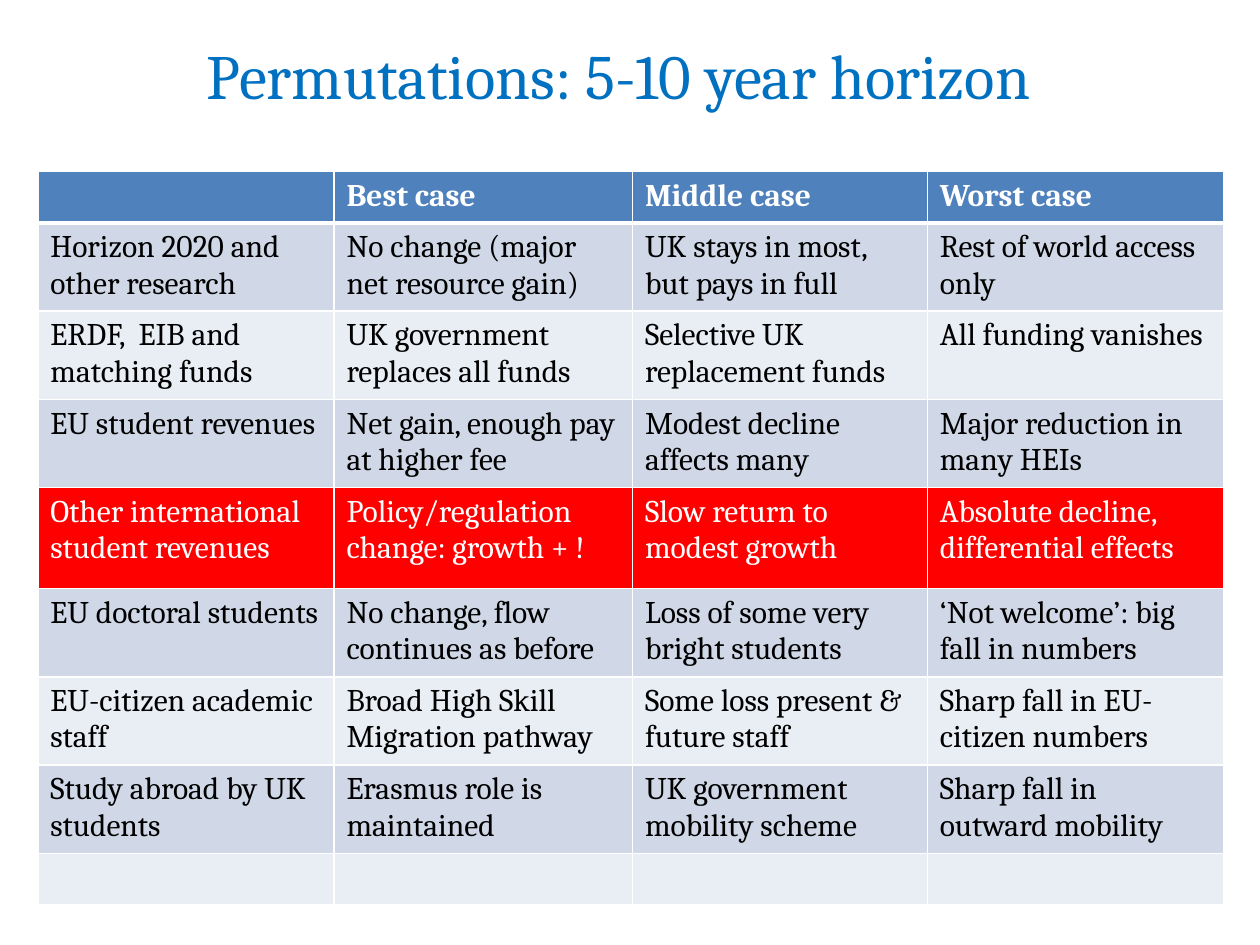
from lxml import etree
from pptx import Presentation
from pptx import util as u
from pptx.dml.color import RGBColor
from pptx.enum import text
from pptx.oxml.ns import qn

COLORS = {
    "title": "0070C0", "header": "4F81BD", "band": "D0D8E8", "light": "E9EDF4",
    "alert": "FF0000", "white": "FFFFFF", "black": "000000",
}
COL_WIDTHS = [2.35, 2.37, 2.34, 2.35]
ROW_HEIGHT, ALERT_HEIGHT = 0.41, 0.8
ALERT_ROW = 4
ROWS = [
    ["", "Best case", "Middle case", "Worst case"],
    ["Horizon 2020 and other research", "No change (major net resource gain)",
     "UK stays in most, but pays in full", "Rest of world access only"],
    ["ERDF,  EIB and matching funds", "UK government replaces all funds",
     "Selective UK replacement funds", "All funding vanishes"],
    ["EU student revenues", "Net gain, enough pay at higher fee",
     "Modest decline affects many", "Major reduction in many HEIs"],
    ["Other international student revenues", "Policy/regulation change: growth + !",
     "Slow return to modest growth", "Absolute decline, differential effects"],
    ["EU doctoral students", "No change, flow continues as before",
     "Loss of some very bright students", "‘Not welcome’: big fall in numbers"],
    ["EU-citizen academic staff", "Broad High Skill Migration pathway",
     "Some loss present & future staff", "Sharp fall in EU-citizen numbers"],
    ["Study abroad by UK students", "Erasmus role is maintained",
     "UK government mobility scheme", "Sharp fall in outward mobility"],
    [""] * 4,
]


def row_style(i):
    """Return fill name, text colour name and boldness of table row i."""
    if i == 0:
        return "header", "white", True
    if i == ALERT_ROW:
        return "alert", "white", False
    return ("band" if i % 2 else "light"), "black", False


class Deck:
    font = "Cambria"

    def __init__(self, prs):
        self.s = prs.slides.add_slide(prs.slide_layouts[6])

    def add_words(self, p, words, color, **fmt):
        r = p.add_run()
        r.text = words
        for name, value in {"name": self.font, **fmt}.items():
            setattr(r.font, name, value)
        r.font.color.rgb = RGBColor.from_string(COLORS[color])

    def title(self, words, x, y, w, h):
        sp = self.s.shapes.add_textbox(*map(u.Inches, (x, y, w, h)))
        tf = sp.text_frame
        tf.word_wrap = True
        tf.vertical_anchor = text.MSO_ANCHOR.MIDDLE
        p = tf.paragraphs[0]
        p.alignment = text.PP_ALIGN.CENTER
        self.add_words(p, words, "title", size=u.Pt(36))

    def borders(self, cell, top, bottom):
        """Draw white cell edges; top and bottom are widths in points."""
        tc_pr = cell._tc.get_or_add_tcPr()
        for side, width in (("L", 1), ("R", 1), ("T", top), ("B", bottom)):
            ln = etree.SubElement(tc_pr, qn(f"a:ln{side}"), w=str(u.Pt(width)))
            fill = etree.SubElement(ln, qn("a:solidFill"))
            etree.SubElement(fill, qn("a:srgbClr"), val=COLORS["white"])

    def table(self, rows, x, y):
        heights = [ALERT_HEIGHT if i == ALERT_ROW else ROW_HEIGHT
                   for i in range(len(rows))]
        size = (x, y, sum(COL_WIDTHS), sum(heights))
        tbl = self.s.shapes.add_table(len(rows), len(COL_WIDTHS),
                                      *map(u.Inches, size)).table
        for col, width in zip(tbl.columns, COL_WIDTHS):
            col.width = u.Inches(width)
        for i, row in enumerate(rows):
            tbl.rows[i].height = u.Inches(heights[i])
            fill, color, bold = row_style(i)
            for j, words in enumerate(row):
                cell = tbl.cell(i, j)
                self.borders(cell, 3 if i == 1 else 1, 3 if i == 0 else 1)
                cell.fill.solid()
                cell.fill.fore_color.rgb = RGBColor.from_string(COLORS[fill])
                if words:
                    self.add_words(cell.text_frame.paragraphs[0], words, color,
                                   size=u.Pt(18), bold=bold)


def main():
    prs = Presentation()
    prs.slide_width, prs.slide_height = u.Inches(10), u.Inches(7.5)
    deck = Deck(prs)
    deck.title("Permutations: 5-10 year horizon", 0.5, 0.1, 8.82, 0.98)
    deck.table(ROWS, 0.3, 1.36)
    prs.save("out.pptx")


if __name__ == "__main__":
    main()
